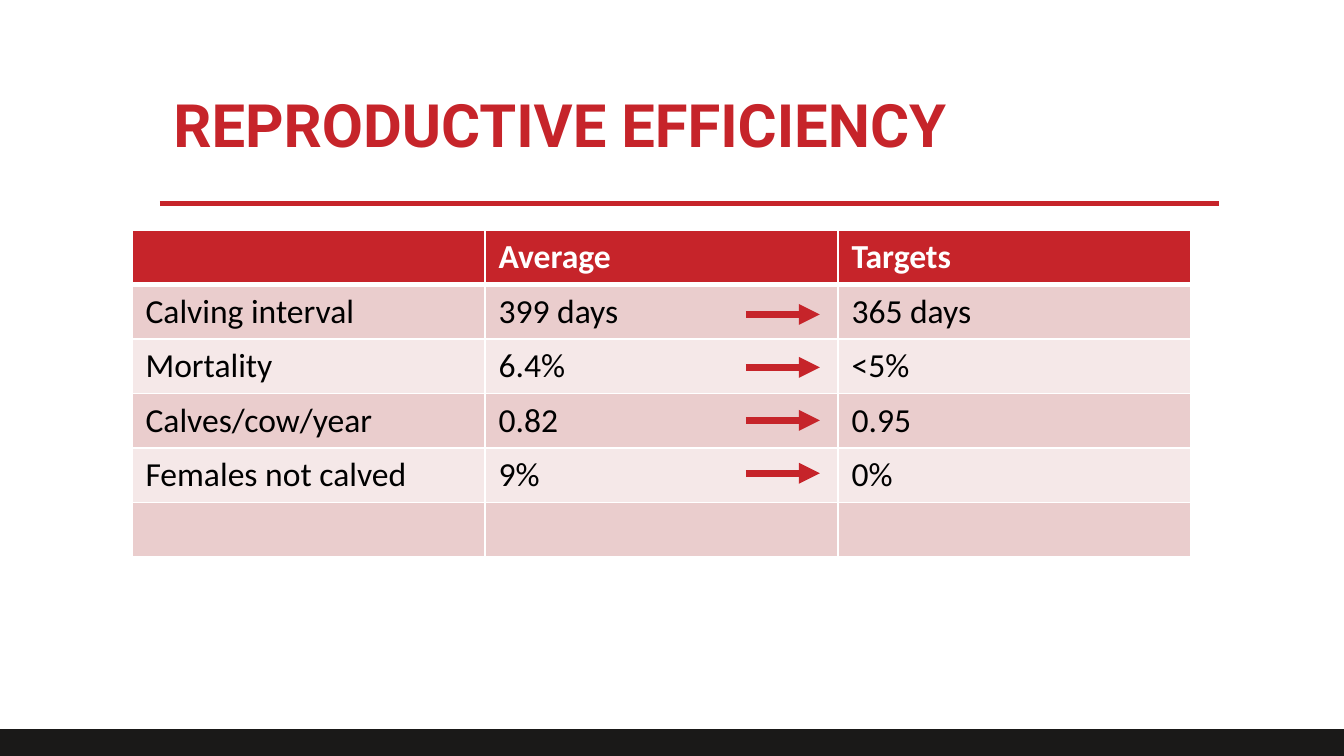
from dataclasses import dataclass

from pptx import Presentation
from pptx.dml.color import RGBColor
from pptx.enum.shapes import MSO_CONNECTOR, MSO_SHAPE
from pptx.enum.text import MSO_ANCHOR, MSO_AUTO_SIZE, PP_ALIGN
from pptx.oxml import parse_xml
from pptx.oxml.ns import nsdecls
from pptx.util import Inches, Pt


@dataclass(frozen=True)
class Theme:
    # Colours
    red: str = "C6242A"
    black: str = "000000"
    white: str = "FFFFFF"
    footer: str = "1A1918"
    bands: tuple = ("EACDCD", "F5E8E8")
    # Type
    title_font: str = "Roboto"
    body_font: str = "Calibri"
    title_size: int = 32
    body_size: int = 18
    # Line widths in points
    rule: float = 2.5
    arrow: float = 3.75
    border: int = 1
    header_border: int = 3


class SlideBuilder:
    """Places elements on a grid of 100 columns, with rows of the same size."""

    def __init__(self, presentation, theme):
        self.theme = theme
        self.unit = presentation.slide_width / 100
        self.slide = presentation.slides.add_slide(presentation.slide_layouts[5])

    def grid(self, *positions):
        return [round(position * self.unit) for position in positions]

    def add_run(self, paragraph, text, font, size, color, bold=False):
        run = paragraph.add_run()
        run.text = text
        run.font.name = font
        run.font.size = Pt(size)
        run.font.bold = bold
        run.font.color.rgb = RGBColor.from_string(color)

    def title(self, text, *box):
        shape = self.slide.shapes.title
        shape.left, shape.top, shape.width, shape.height = self.grid(*box)
        frame = shape.text_frame
        frame.word_wrap = True
        frame.auto_size = MSO_AUTO_SIZE.NONE
        frame.vertical_anchor = MSO_ANCHOR.TOP
        paragraph = frame.paragraphs[0]
        paragraph.alignment = PP_ALIGN.LEFT
        paragraph.line_spacing = 0.9
        theme = self.theme
        self.add_run(paragraph, text, theme.title_font, theme.title_size, theme.red, True)

    def bar(self, color, *box):
        shape = self.slide.shapes.add_shape(MSO_SHAPE.RECTANGLE, *self.grid(*box))
        shape.shadow.inherit = False
        shape.fill.solid()
        shape.fill.fore_color.rgb = RGBColor.from_string(color)
        shape.line.fill.background()

    def line(self, left, right, row, width, arrowhead=False):
        connector = self.slide.shapes.add_connector(
            MSO_CONNECTOR.STRAIGHT, *self.grid(left, row, right, row))
        connector.line.width = Pt(width)
        connector.line.color.rgb = RGBColor.from_string(self.theme.red)
        if arrowhead:
            connector.line._get_or_add_ln().append(
                parse_xml(f'<a:tailEnd {nsdecls("a")} type="triangle"/>'))
        connector._element.spPr.append(parse_xml(f'<a:effectLst {nsdecls("a")}/>'))

    def cell_borders(self, cell, top, bottom):
        side = self.theme.border
        properties = cell._tc.get_or_add_tcPr()
        for edge, width in (("L", side), ("R", side), ("T", top), ("B", bottom)):
            properties.append(parse_xml(
                f'<a:ln{edge} {nsdecls("a")} w="{Pt(width)}"><a:solidFill>'
                f'<a:srgbClr val="{self.theme.white}"/></a:solidFill></a:ln{edge}>'))

    def table(self, rows, *box):
        theme = self.theme
        table = self.slide.shapes.add_table(
            len(rows), len(rows[0]), *self.grid(*box)).table
        table.horz_banding = False
        for row_index, texts in enumerate(rows):
            header = row_index == 0
            fill = theme.red if header else theme.bands[(row_index - 1) % 2]
            color = theme.white if header else theme.black
            top = theme.header_border if row_index == 1 else theme.border
            bottom = theme.header_border if header else theme.border
            for column_index, text in enumerate(texts):
                cell = table.cell(row_index, column_index)
                self.cell_borders(cell, top, bottom)
                cell.fill.solid()
                cell.fill.fore_color.rgb = RGBColor.from_string(fill)
                if text:
                    self.add_run(cell.text_frame.paragraphs[0], text,
                                 theme.body_font, theme.body_size, color, header)


def main():
    presentation = Presentation()
    presentation.slide_width = Inches(10)
    presentation.slide_height = presentation.slide_width * 9 // 16
    theme = Theme()
    builder = SlideBuilder(presentation, theme)

    # Footer band, title and rule
    builder.bar(theme.footer, 0, 54.25, 100, 2)
    builder.line(11.9, 90.7, 15.13, theme.rule)
    builder.title("REPRODUCTIVE EFFICIENCY", 11.9, 6.64, 78.8, 8.6)

    # Averages against targets
    rows = [
        ("", "Average", "Targets"),
        ("Calving interval", "399 days", "365 days"),
        ("Mortality", "6.4%", "<5%"),
        ("Calves/cow/year", "0.82", "0.95"),
        ("Females not calved", "9%", "0%"),
        ("", "", ""),
    ]
    builder.table(rows, 9.83, 17.12, 78.8, 24.3)

    # One arrow for each filled row, from average to target
    for index in range(4):
        builder.line(55.5, 61, 23.4 + index * 3.94, theme.arrow, arrowhead=True)

    presentation.save("out.pptx")


if __name__ == "__main__":
    main()
